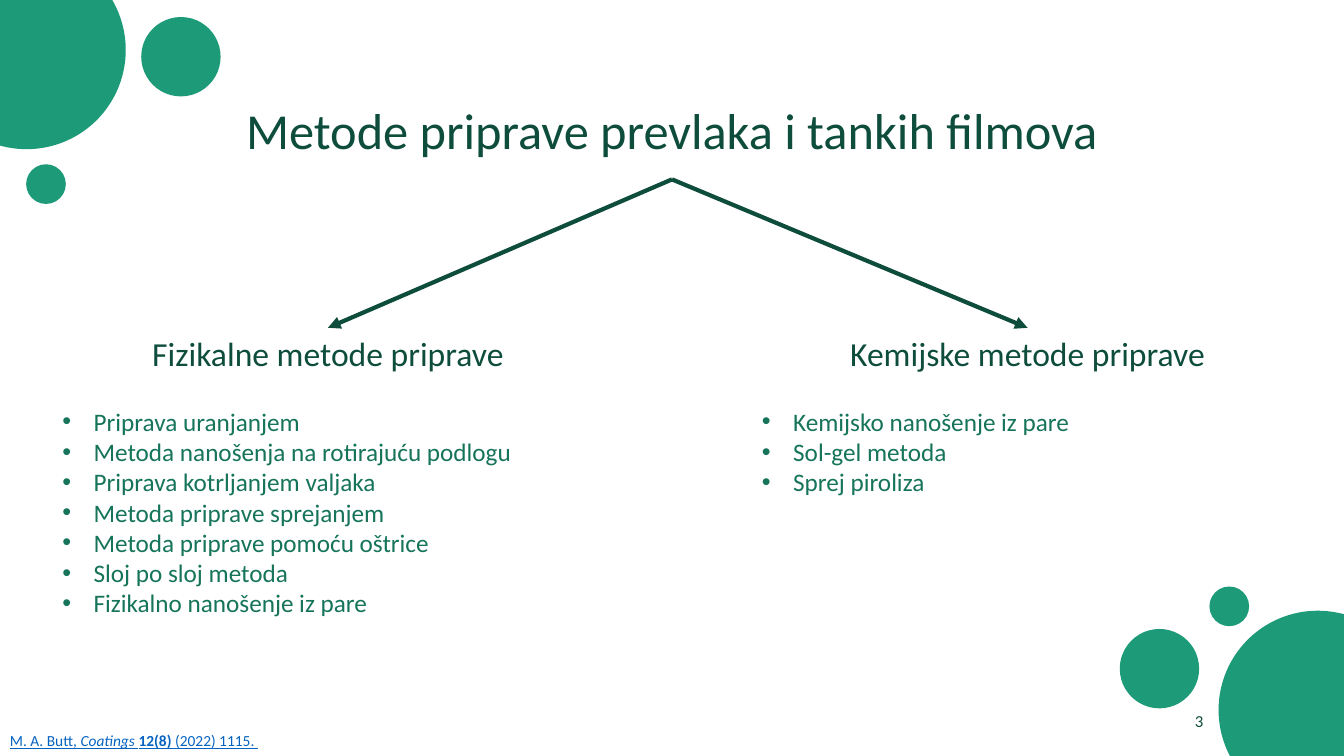
import dataclasses

import pptx
import pptx.dml.color
import pptx.enum.shapes
import pptx.enum.text
import pptx.oxml
import pptx.oxml.ns
import pptx.util

Cm = pptx.util.Cm
Pt = pptx.util.Pt
Align = pptx.enum.text.PP_ALIGN
Anchor = pptx.enum.text.MSO_ANCHOR
AutoSize = pptx.enum.text.MSO_AUTO_SIZE


@dataclasses.dataclass(frozen=True)
class Theme:
    font: str = "Calibri"
    dark: str = "0E4D3C"
    body: str = "16745A"
    circle: str = "1D9A78"
    link: str = "0563C1"
    title_size: int = 36
    heading_size: int = 24
    list_size: int = 18
    number_size: int = 12
    citation_size: int = 11
    arrow_width: int = 3


THEME = Theme()
SLIDE_WIDTH, SLIDE_HEIGHT = 33.87, 19.05

PHYSICAL = (
    "Priprava uranjanjem",
    "Metoda nanošenja na rotirajuću podlogu",
    "Priprava kotrljanjem valjaka",
    "Metoda priprave sprejanjem",
    "Metoda priprave pomoću oštrice",
    "Sloj po sloj metoda",
    "Fizikalno nanošenje iz pare",
)
CHEMICAL = ("Kemijsko nanošenje iz pare", "Sol-gel metoda", "Sprej piroliza")


def rgb(colour):
    return pptx.dml.color.RGBColor.from_string(colour)


def add_text_area(slide, left, top, width, height, anchor=Anchor.TOP):
    area = slide.shapes.add_textbox(Cm(left), Cm(top), Cm(width), Cm(height))
    area.text_frame.word_wrap = True
    area.text_frame.vertical_anchor = anchor
    return area


def add_run(paragraph, text, size, colour):
    run = paragraph.add_run()
    run.text = text
    run.font.name = THEME.font
    run.font.size = Pt(size)
    run.font.color.rgb = rgb(colour)
    return run


def add_line_of_text(area, text, size, align):
    paragraph = area.text_frame.paragraphs[0]
    paragraph.alignment = align
    add_run(paragraph, text, size, THEME.dark)
    return paragraph


def set_bullet(paragraph, indent=0.79):
    properties = paragraph._p.get_or_add_pPr()
    properties.set("marL", str(Cm(indent)))
    properties.set("indent", str(-Cm(indent)))
    namespace = pptx.oxml.ns.nsdecls("a")
    properties.append(pptx.oxml.parse_xml(f'<a:buFont {namespace} typeface="Arial"/>'))
    properties.append(pptx.oxml.parse_xml(f'<a:buChar {namespace} char="•"/>'))


def add_title(slide, left, top, width, height):
    title = add_text_area(slide, left, top, width, height, Anchor.MIDDLE)
    line = add_line_of_text(title, "Metode priprave prevlaka i tankih filmova",
                            THEME.title_size, Align.CENTER)
    line.line_spacing = 0.9
    return title


def add_method_column(slide, left, top, width, heading_text, methods):
    """Place a centred heading over its bulleted list; return the heading."""
    inset, list_offset, line_height = 1.3, 1.85, 0.76
    heading = add_text_area(slide, left + inset, top, width - 2 * inset, 1.27)
    heading.text_frame.auto_size = AutoSize.SHAPE_TO_FIT_TEXT
    add_line_of_text(heading, heading_text, THEME.heading_size, Align.CENTER)

    method_list = add_text_area(slide, left, top + list_offset, width,
                                0.25 + line_height * len(methods))
    frame = method_list.text_frame
    frame.auto_size = AutoSize.SHAPE_TO_FIT_TEXT
    for index, method in enumerate(methods):
        paragraph = frame.add_paragraph() if index else frame.paragraphs[0]
        set_bullet(paragraph)
        add_run(paragraph, method, THEME.list_size, THEME.body)
    return heading


def add_arrow(slide, title, heading):
    """Join the bottom of the title to the top of a heading."""
    arrow = slide.shapes.add_connector(
        pptx.enum.shapes.MSO_CONNECTOR.STRAIGHT, 0, 0, 0, 0)
    arrow.begin_connect(title, 2)
    arrow.end_connect(heading, 0)
    arrow.line.color.rgb = rgb(THEME.dark)
    arrow.line.width = Pt(THEME.arrow_width)
    namespace = pptx.oxml.ns.nsdecls("a")
    arrow.line._get_or_add_ln().append(
        pptx.oxml.parse_xml(f'<a:tailEnd {namespace} type="triangle"/>'))
    arrow._element.spPr.append(pptx.oxml.parse_xml(f"<a:effectLst {namespace}/>"))


def add_circle_cluster(slide, left, top, medium_offset, small_offset):
    """Place a large circle, and two smaller ones offset from its box."""
    circles = ((5, (0, 0)), (2, medium_offset), (1, small_offset))
    for diameter, (dx, dy) in circles:
        circle = slide.shapes.add_shape(
            pptx.enum.shapes.MSO_SHAPE.OVAL,
            Cm(left + dx), Cm(top + dy), Cm(diameter), Cm(diameter))
        circle.shadow.inherit = False
        circle.fill.solid()
        circle.fill.fore_color.rgb = rgb(THEME.circle)
        circle.line.fill.background()


def add_page_number(slide, left, top, width, height):
    number = add_text_area(slide, left, top, width, height, Anchor.MIDDLE)
    add_line_of_text(number, "3", THEME.number_size, Align.RIGHT)


def add_citation(slide, left, top, width, height):
    citation = add_text_area(slide, left, top, width, height)
    citation.text_frame.word_wrap = False
    citation.text_frame.auto_size = AutoSize.SHAPE_TO_FIT_TEXT
    parts = (
        ("M. A. Butt, ", False, False),
        ("Coatings", False, True),
        (" ", False, False),
        ("12(8)", True, False),
        (" (2022) 1115. ", False, False),
    )
    for text, bold, italic in parts:
        run = add_run(citation.text_frame.paragraphs[0], text,
                      THEME.citation_size, THEME.link)
        run.font.bold = bold
        run.font.italic = italic
        run.font.underline = True


def add_methods_slide(presentation):
    slide = presentation.slides.add_slide(presentation.slide_layouts[6])
    margin = 2.61
    title = add_title(slide, margin, 2.18, SLIDE_WIDTH - 2 * margin, 2.34)
    add_page_number(slide, 22.96, 17.65, 7.62, 1.02)
    columns = (
        (1.32, "Fizikalne metode priprave", PHYSICAL),
        (18.95, "Kemijske metode priprave", CHEMICAL),
    )
    for left, heading_text, methods in columns:
        heading = add_method_column(slide, left, 8.26, 13.89, heading_text, methods)
        add_arrow(slide, title, heading)
    add_citation(slide, 0, SLIDE_HEIGHT - 0.74, 6.83, 0.74)
    add_circle_cluster(slide, -1.83, -1.24, (5.39, 1.67), (2.49, 5.38))
    add_circle_cluster(slide, 30.71, 15.39, (-2.49, 0.46), (-0.23, -0.61))


def main():
    presentation = pptx.Presentation()
    presentation.slide_width = Cm(SLIDE_WIDTH)
    presentation.slide_height = Cm(SLIDE_HEIGHT)
    add_methods_slide(presentation)
    presentation.save("out.pptx")


if __name__ == "__main__":
    main()
